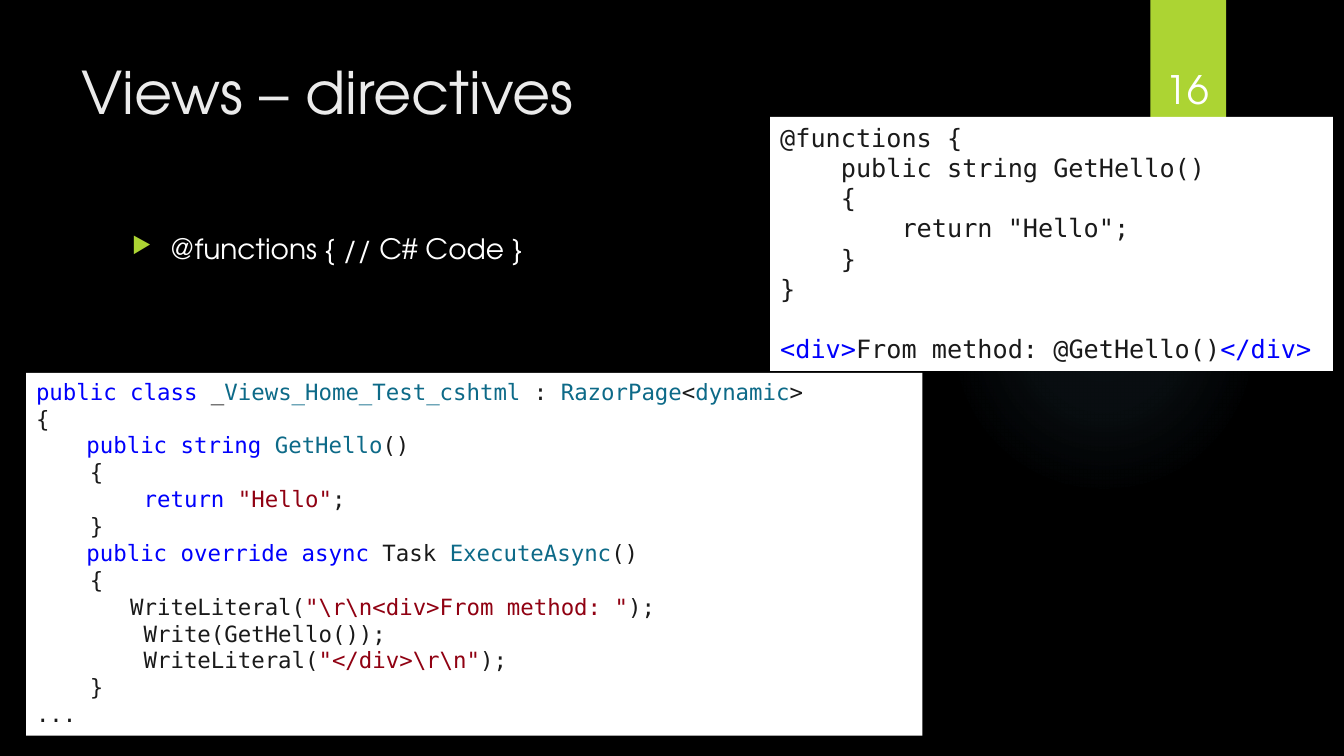
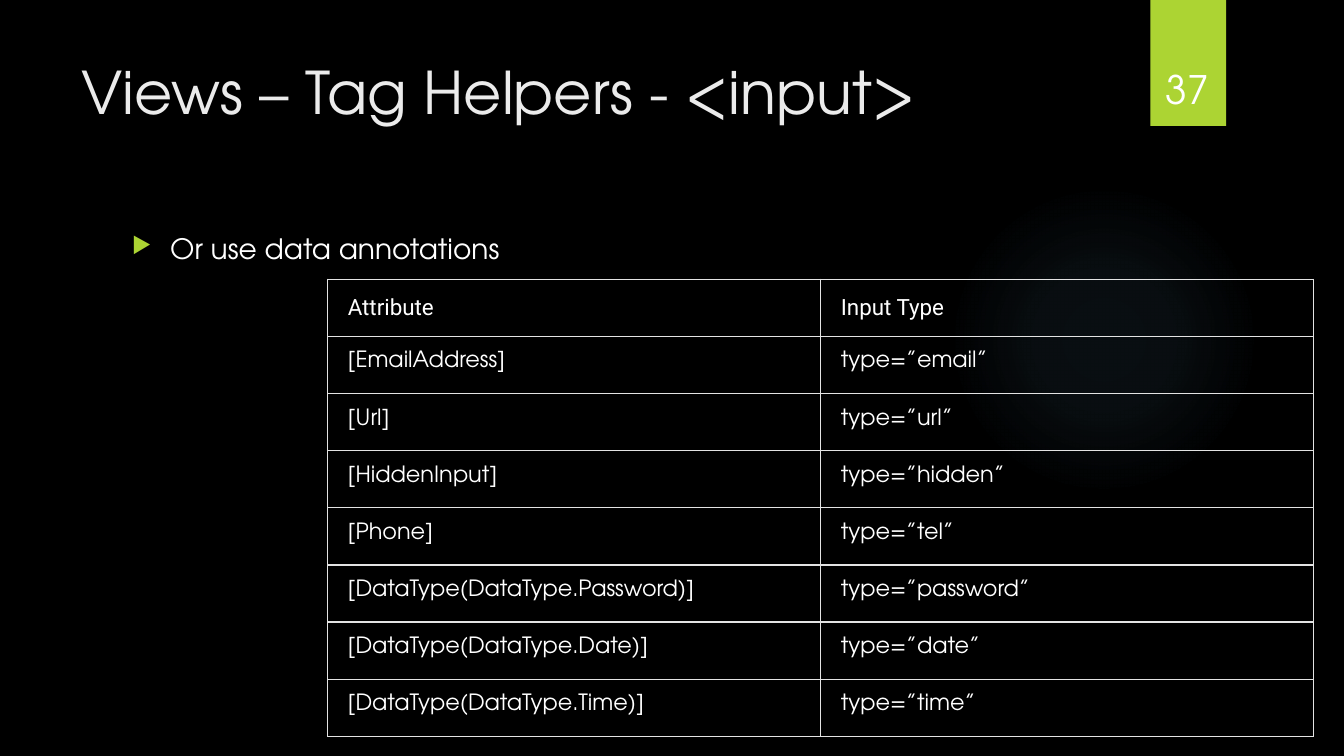
from dataclasses import dataclass
from typing import NamedTuple

from lxml.etree import SubElement
from pptx import Presentation
from pptx.dml.color import RGBColor
from pptx.enum.shapes import MSO_SHAPE as Preset
from pptx.enum.text import MSO_ANCHOR as Anchor, PP_ALIGN as Align
from pptx.oxml import parse_xml
from pptx.oxml.ns import nsdecls, qn
from pptx.util import Emu, Inches, Pt


@dataclass(frozen=True)
class Theme:
    background: str = "000000"
    accent: str = "ACD433"
    glow: str = "7AC4F0"
    title: str = "EBEBEB"
    text: str = "FFFFFF"
    panel: str = "FFFFFF"
    border: str = "E3E3E3"
    code: str = "1A1A1A"
    keyword: str = "0000FC"
    type_name: str = "0D6A88"
    string: str = "900112"
    font: str = "TeX Gyre Adventor"
    header_font: str = "Roboto"
    code_font: str = "DejaVu Sans Mono"
    title_size: int = 42
    number_size: int = 28
    body_size: int = 20
    table_size: int = 16
    code_leading: float = 1.2


THEME = Theme()
SLIDE_WIDTH, SLIDE_HEIGHT = Inches(13.33), Inches(7.5)


class Box(NamedTuple):
    """Left, top, width and height in percent of the slide."""
    left: float
    top: float
    width: float
    height: float

    def emu(self) -> tuple:
        sides = (SLIDE_WIDTH, SLIDE_HEIGHT) * 2
        return tuple(Emu(round(side * share / 100)) for side, share in zip(sides, self))


class Span(NamedTuple):
    text: str
    color: str = THEME.code


class CodeLine(NamedTuple):
    spans: tuple
    gap_lines: int = 0


@dataclass(frozen=True)
class CodePanel:
    box: Box
    size: int
    lines: tuple


@dataclass(frozen=True)
class Page:
    number: int
    title: str
    bullet: str
    panels: tuple = ()
    rows: tuple = ()


# Places
GLOW = Box(70.59, 24.4, 23.11, 41.07)
NUMBER_TAG = Box(85.6, 0, 5.63, 16.67)
NUMBER = Box(84.92, 4.27, 6.9, 11.2)
TITLE = Box(5.33, 6.67, 77.19, 20.4)
BODY = Box(9.08, 30, 73.37, 61.2)
TABLE = Box(24.38, 36.93, 73.37, 59.87)


# Code content
def plain(text: str) -> Span:
    return Span(text)


def keyword(text: str) -> Span:
    return Span(text, THEME.keyword)


def type_name(text: str) -> Span:
    return Span(text, THEME.type_name)


def string(text: str) -> Span:
    return Span(text, THEME.string)


def line(*spans: Span, gap_lines: int = 0) -> CodeLine:
    return CodeLine(spans, gap_lines)


OPEN, CLOSE = line(plain("    {")), line(plain("    }"))

VIEW_CODE = CodePanel(Box(57.31, 15.47, 41.86, 33.6), 18, (
    line(plain("@functions {")),
    line(plain("    public string GetHello()")),
    OPEN,
    line(plain('        return "Hello";')),
    CLOSE,
    line(plain("}")),
    line(keyword("<div>"), plain("From method: @GetHello()"), keyword("</div>"), gap_lines=1),
))

GENERATED_CODE = CodePanel(Box(1.95, 49.33, 66.69, 48), 16, (
    line(keyword("public class"), plain(" _"), type_name("Views_Home_Test_cshtml"),
         plain(" : "), type_name("RazorPage"), plain("<"), type_name("dynamic"), plain(">")),
    line(plain("{")),
    line(keyword("\tpublic string "), type_name("GetHello"), plain("()")),
    OPEN,
    line(plain("        "), keyword("return "), string('"Hello"'), plain(";")),
    CLOSE,
    line(keyword("\tpublic override async"), plain(" Task "),
         type_name("ExecuteAsync"), plain("()")),
    OPEN,
    line(plain("       WriteLiteral("), string(r'"\r\n<div>From method: "'), plain(");")),
    line(plain("        Write(GetHello());")),
    line(plain("        WriteLiteral("), string(r'"</div>\r\n"'), plain(");")),
    CLOSE,
    line(plain("...")),
))

PAGES = (
    Page(16, "Views – directives", "@functions { // C# Code }",
         panels=(VIEW_CODE, GENERATED_CODE)),
    Page(37, "Views – Tag Helpers - <input>", "Or use data annotations", rows=(
        ("Attribute", "Input Type"),
        ("[EmailAddress]", "type=”email”"),
        ("[Url]", "type=”url”"),
        ("[HiddenInput]", "type=”hidden”"),
        ("[Phone]", "type=”tel”"),
        ("[DataType(DataType.Password)]", "type=”password”"),
        ("[DataType(DataType.Date)]", "type=”date”"),
        ("[DataType(DataType.Time)]", "type=”time”"),
    )),
)


# Drawing helpers
def add_run(paragraph, text: str, size: float, color: str, font: str = THEME.font) -> None:
    run = paragraph.add_run()
    run.text = text
    run.font.size = Pt(size)
    run.font.name = font
    run.font.color.rgb = RGBColor.from_string(color)


def add_filled(slide, preset, box: Box, color: str):
    shape = slide.shapes.add_shape(preset, *box.emu())
    shape.shadow.inherit = False
    shape.fill.solid()
    shape.fill.fore_color.rgb = RGBColor.from_string(color)
    shape.line.fill.background()
    return shape


def add_text(slide, box: Box, text: str, size: float, color: str, anchor=Anchor.TOP):
    frame = slide.shapes.add_textbox(*box.emu()).text_frame
    frame.word_wrap = True
    frame.vertical_anchor = anchor
    paragraph = frame.paragraphs[0]
    add_run(paragraph, text, size, color)
    return paragraph


def add_glow(slide) -> None:
    glow = add_filled(slide, Preset.OVAL, GLOW, THEME.glow)
    stops = "".join(
        f'<a:gs pos="{position * 1000}"><a:srgbClr val="{THEME.glow}">'
        f'<a:alpha val="{alpha * 1000}"/></a:srgbClr></a:gs>'
        for position, alpha in ((0, 7), (36, 6), (69, 0), (100, 0)))
    gradient = parse_xml(
        f'<a:gradFill {nsdecls("a")} rotWithShape="1"><a:gsLst>{stops}</a:gsLst>'
        '<a:path path="circle"><a:fillToRect l="50000" t="50000" r="50000" b="50000"/>'
        '</a:path></a:gradFill>')
    properties = glow._element.spPr
    properties.replace(properties.find(qn("a:solidFill")), gradient)


def add_bullet(slide, text: str) -> None:
    paragraph = add_text(slide, BODY, text, THEME.body_size, THEME.text)
    properties = paragraph._p.get_or_add_pPr()
    indent = Inches(0.38)
    properties.set("marL", str(indent))
    properties.set("indent", str(-indent))
    color = SubElement(properties, qn("a:buClr"))
    SubElement(color, qn("a:srgbClr"), val=THEME.accent)
    SubElement(properties, qn("a:buSzPct"), val="80000")
    SubElement(properties, qn("a:buChar"), char="▶")


def add_frame(slide, page: Page) -> None:
    """Draw the background, number tag, title and bullet of every page."""
    slide.background.fill.solid()
    slide.background.fill.fore_color.rgb = RGBColor.from_string(THEME.background)
    add_glow(slide)
    add_filled(slide, Preset.RECTANGLE, NUMBER_TAG, THEME.accent)
    add_text(slide, TITLE, page.title, THEME.title_size, THEME.title)
    add_bullet(slide, page.bullet)
    number = add_text(slide, NUMBER, str(page.number), THEME.number_size, THEME.text,
                      Anchor.BOTTOM)
    number.alignment = Align.CENTER


def add_code(slide, panel: CodePanel) -> None:
    frame = add_filled(slide, Preset.RECTANGLE, panel.box, THEME.panel).text_frame
    frame.word_wrap = True
    frame.vertical_anchor = Anchor.TOP
    leading = panel.size * THEME.code_leading
    for index, code_line in enumerate(panel.lines):
        paragraph = frame.add_paragraph() if index else frame.paragraphs[0]
        paragraph.alignment = Align.LEFT
        paragraph.line_spacing = Pt(leading)
        if code_line.gap_lines:
            paragraph.space_before = Pt(leading * code_line.gap_lines)
        tabs = SubElement(paragraph._p.get_or_add_pPr(), qn("a:tabLst"))
        SubElement(tabs, qn("a:tab"), pos=str(Inches(0.5)), algn="l")
        for span in code_line.spans:
            add_run(paragraph, span.text, panel.size, span.color, THEME.code_font)


def add_borders(cell) -> None:
    properties = cell._tc.get_or_add_tcPr()
    for side in ("a:lnL", "a:lnR", "a:lnT", "a:lnB"):
        border = SubElement(properties, qn(side), w=str(Pt(1)))
        fill = SubElement(border, qn("a:solidFill"))
        SubElement(fill, qn("a:srgbClr"), val=THEME.border)


def add_grid(slide, rows: tuple) -> None:
    table = slide.shapes.add_table(len(rows), len(rows[0]), *TABLE.emu()).table
    table.first_row = table.horz_banding = False
    for row_index, texts in enumerate(rows):
        is_header = row_index == 0
        for column_index, text in enumerate(texts):
            cell = table.cell(row_index, column_index)
            cell.margin_left = cell.margin_right = Inches(0.2)
            cell.margin_top = cell.margin_bottom = Inches(0.15)
            cell.vertical_anchor = Anchor.BOTTOM if is_header else Anchor.TOP
            add_borders(cell)
            cell.fill.background()
            add_run(cell.text_frame.paragraphs[0], text, THEME.table_size, THEME.text,
                    THEME.header_font if is_header else THEME.font)


def main() -> None:
    deck = Presentation()
    deck.slide_width, deck.slide_height = SLIDE_WIDTH, SLIDE_HEIGHT
    blank = deck.slide_layouts[6]
    for page in PAGES:
        slide = deck.slides.add_slide(blank)
        add_frame(slide, page)
        for panel in page.panels:
            add_code(slide, panel)
        if page.rows:
            add_grid(slide, page.rows)
    deck.save("out.pptx")


if __name__ == "__main__":
    main()
